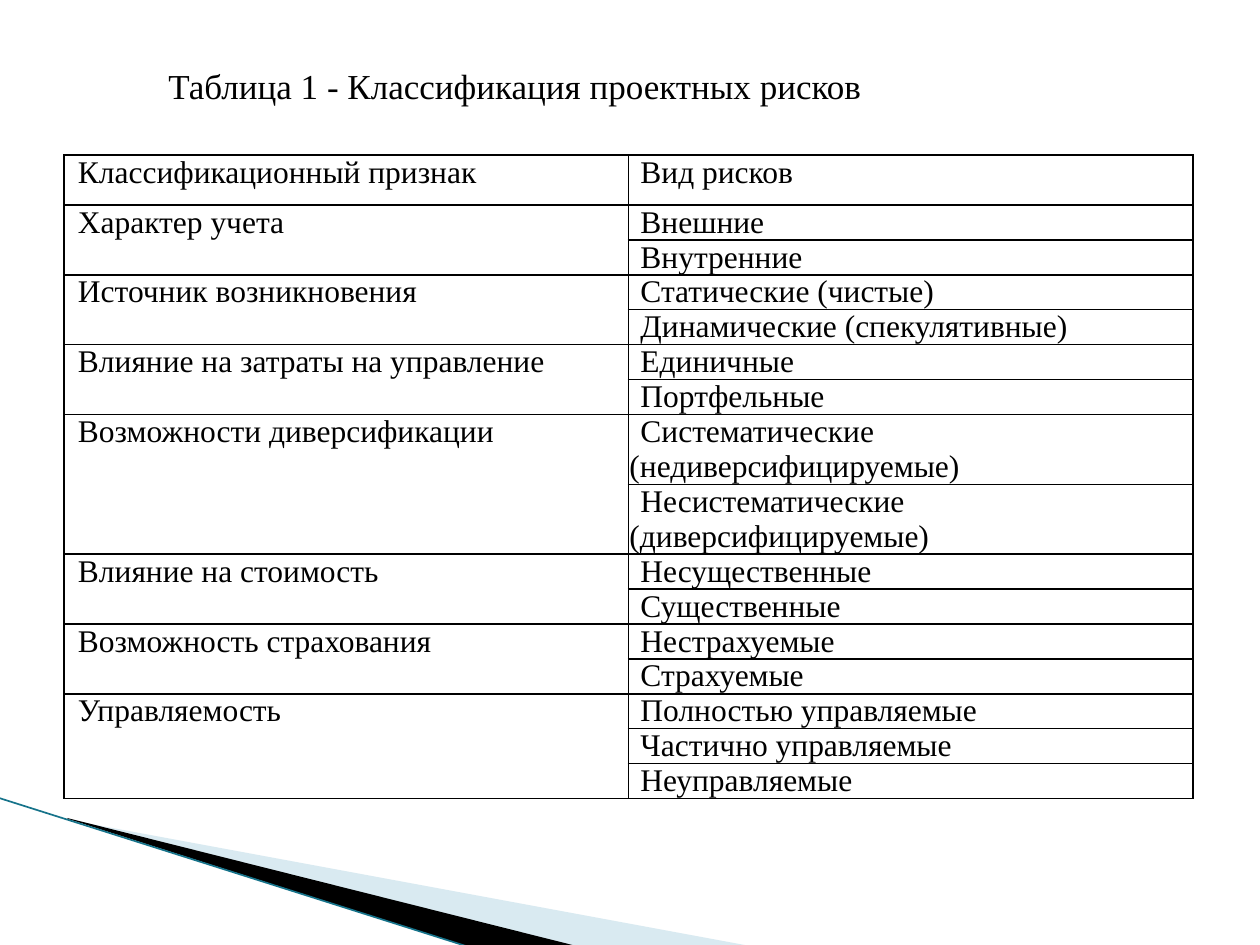
import pptx
import pptx.util
import pptx.dml.color
import pptx.enum.shapes
import pptx.enum.text
import pptx.oxml.ns
import lxml.etree

EMU_PER_PX = 914400 / 126
COLORS = {"ink": "000000", "paper": "FFFFFF", "wedge": "A0CBDC", "edge": "16738A"}
FONT = "Times New Roman"
LINE_CHARS = 30  # longer cell texts take two lines

HEADER = ("Классификационный признак", "Вид рисков")
GROUPS = [
    ("Характер учета", ["Внешние", "Внутренние"]),
    ("Источник возникновения", ["Статические (чистые)", "Динамические (спекулятивные)"]),
    ("Влияние на затраты на управление", ["Единичные", "Портфельные"]),
    ("Возможности диверсификации", ["Систематические (недиверсифицируемые)",
                                    "Несистематические (диверсифицируемые)"]),
    ("Влияние на стоимость", ["Несущественные", "Существенные"]),
    ("Возможность страхования", ["Нестрахуемые", "Страхуемые"]),
    ("Управляемость", ["Полностью управляемые", "Частично управляемые", "Неуправляемые"]),
]


def px(length):
    return pptx.util.Emu(round(length * EMU_PER_PX))


def color(name):
    return pptx.dml.color.RGBColor.from_string(COLORS[name])


def set_all(target, values):
    for name, value in values.items():
        setattr(target, name, value)


def add_child(parent, tag, **attributes):
    child = lxml.etree.SubElement(parent, pptx.oxml.ns.qn(tag))
    for name, value in attributes.items():
        child.set(name, str(value))
    return child


class Painter:
    def __init__(self, slide):
        self.slide = slide

    def fill_text(self, frame, text, size, left=0, first=0, **paragraph_format):
        para = frame.paragraphs[0]
        set_all(para, {"alignment": pptx.enum.text.PP_ALIGN.JUSTIFY, **paragraph_format})
        properties = para._p.get_or_add_pPr()
        properties.set("marL", str(px(left)))
        properties.set("indent", str(px(first)))
        span = para.add_run()
        span.text = text
        set_all(span.font, {"name": FONT, "size": pptx.util.Pt(size)})
        span.font.color.rgb = color("ink")

    def text(self, x, y, width, height, text, size, **layout):
        box = self.slide.shapes.add_textbox(px(x), px(y), px(width), px(height))
        box.text_frame.word_wrap = True
        self.fill_text(box.text_frame, text, size, **layout)

    def wedge(self, points, fill, opacity=100):
        builder = self.slide.shapes.build_freeform(*points[0], scale=EMU_PER_PX)
        builder.add_line_segments(points[1:], close=True)
        shape = builder.convert_to_shape()
        shape.shadow.inherit = False
        shape.fill.solid()
        shape.fill.fore_color.rgb = color(fill)
        shape.line.fill.background()
        if opacity < 100:
            tint = shape._element.spPr.find(".//" + pptx.oxml.ns.qn("a:srgbClr"))
            add_child(tint, "a:alpha", val=opacity * 1000)

    def line(self, start, end, name, width):
        line = self.slide.shapes.add_connector(
            pptx.enum.shapes.MSO_CONNECTOR.STRAIGHT, *map(px, start + end))
        line.line.color.rgb = color(name)
        line.line.width = pptx.util.Pt(width)
        add_child(line._element.spPr, "a:effectLst")

    def cell(self, cell, text, **layout):
        set_all(cell, {"margin_left": px(1), "margin_right": px(1),
                       "margin_top": 0, "margin_bottom": 0})
        properties = cell._tc.get_or_add_tcPr()
        for side in ("a:lnL", "a:lnR", "a:lnT", "a:lnB"):
            border = add_child(properties, side, w=pptx.util.Pt(1))
            add_child(add_child(border, "a:solidFill"), "a:srgbClr", val=COLORS["ink"])
        cell.fill.solid()
        cell.fill.fore_color.rgb = color("paper")
        if text:
            self.fill_text(cell.text_frame, text, 18, **layout)

    def table(self, x, y, width, header, groups):
        rows = [header]
        spans = []
        for feature, kinds in groups:
            spans.append((len(rows), len(rows) + len(kinds) - 1))
            rows += [(feature if i == 0 else "", kind) for i, kind in enumerate(kinds)]
        heights = [50] + [60 if len(kind) > LINE_CHARS else 30 for _, kind in rows[1:]]
        table = self.slide.shapes.add_table(
            len(rows), 2, px(x), px(y), px(width), px(sum(heights))).table
        set_all(table, {"first_row": False, "horz_banding": False})
        for column in table.columns:
            column.width = px(width / 2)
        for index, (feature, kind) in enumerate(rows):
            table.rows[index].height = px(heights[index])
            self.cell(table.cell(index, 0), feature, left=13)
            self.cell(table.cell(index, 1), kind, first=11)
        for top, bottom in spans:
            table.cell(top, 0).merge(table.cell(bottom, 0))


def main():
    deck = pptx.Presentation()
    set_all(deck, {"slide_width": px(1260), "slide_height": px(945)})
    page = deck.slides.add_slide(deck.slide_layouts[6])
    painter = Painter(page)

    # Corner decoration
    painter.wedge([(69, 820), (750, 946), (575, 946), (69, 819)], "wedge", 40)
    painter.wedge([(67, 818), (576, 946), (469, 947), (68, 819)], "ink")
    painter.line((-1, 798), (469, 947), "edge", 0.95)

    # Risk classification table
    painter.table(64, 155, 1129, HEADER, GROUPS)

    # Caption
    painter.text(94, 37, 1081, 77, "Таблица 1 - Классификация проектных рисков", 20,
                 first=62, line_spacing=1.5)

    deck.save("out.pptx")


if __name__ == "__main__":
    main()
